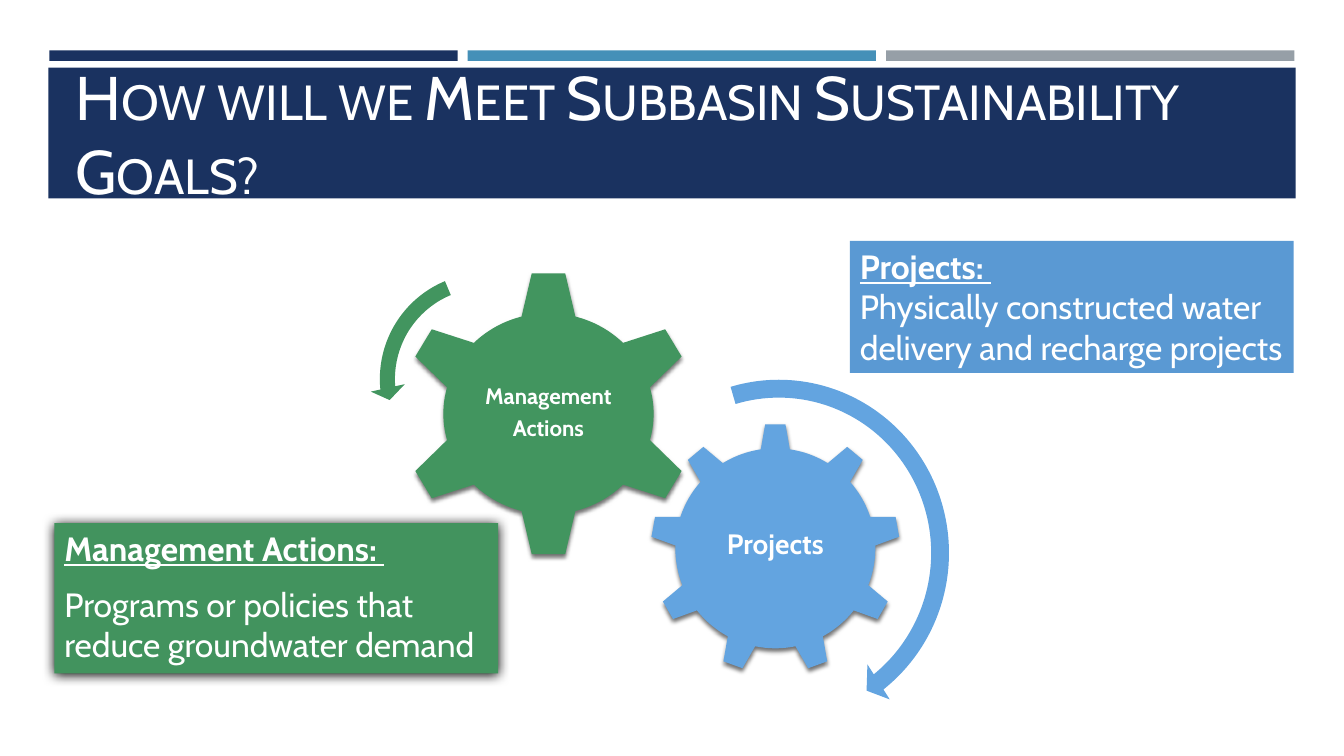
from lxml import etree
from pptx import Presentation
from pptx.dml.color import RGBColor
from pptx.enum.shapes import MSO_SHAPE
from pptx.enum.text import MSO_ANCHOR, MSO_AUTO_SIZE, PP_ALIGN
from pptx.oxml.ns import qn
from pptx.util import Inches, Pt

RECT, GEAR_6, GEAR_9 = MSO_SHAPE.RECTANGLE, MSO_SHAPE.GEAR_6, MSO_SHAPE.GEAR_9
ARC_RIGHT, ARC_LEFT = MSO_SHAPE.CIRCULAR_ARROW, MSO_SHAPE.LEFT_CIRCULAR_ARROW
TOP, MIDDLE = MSO_ANCHOR.TOP, MSO_ANCHOR.MIDDLE
LEFT, CENTER = PP_ALIGN.LEFT, PP_ALIGN.CENTER
FIT_SHAPE = MSO_AUTO_SIZE.SHAPE_TO_FIT_TEXT

FONT = "Cabin"
WIDTH, HEIGHT = Inches(13.33), Inches(7.5)
COLORS = {
    "navy": "1A3260", "teal": "4590B8", "grey": "969FA7", "white": "FFFFFF",
    "sky": "63A4E0", "green": "42955F", "sky_box": "5A99D3", "green_box": "42935E",
    "shadow": "000000",
}


def place(x, y, w, h):
    """Turn percentages of the slide's width and height into lengths."""
    return (int(WIDTH * x / 100), int(HEIGHT * y / 100),
            int(WIDTH * w / 100), int(HEIGHT * h / 100))


def add_block(s, kind, area, color, adjustments=()):
    sp = s.shapes.add_shape(kind, *place(*area))
    sp.shadow.inherit = False
    sp.fill.solid()
    sp.fill.fore_color.rgb = RGBColor.from_string(COLORS[color])
    sp.line.fill.background()
    for i, value in enumerate(adjustments):
        sp.adjustments[i] = value
    return sp


def add_shadow(sp, opacity, blur, distance):
    effects = sp._element.spPr.find(qn("a:effectLst"))
    shadow = etree.SubElement(effects, qn("a:outerShdw"), blurRad=str(Pt(blur)),
                              dist=str(Pt(distance)), dir="5400000",
                              algn="ctr", rotWithShape="0")
    color = etree.SubElement(shadow, qn("a:srgbClr"), val=COLORS["shadow"])
    etree.SubElement(color, qn("a:alpha"), val=str(opacity * 1000))


def write(sp, lines, size, align=LEFT, anchor=MIDDLE, inset=None):
    """Fill a shape with paragraphs and return them."""
    tf = sp.text_frame
    tf.word_wrap = True
    tf.vertical_anchor = anchor
    if inset is not None:
        tf.margin_left = tf.margin_right = Inches(inset)
        tf.margin_top = tf.margin_bottom = Inches(inset)
    tf.text = "\n".join(lines)
    for p in tf.paragraphs:
        p.alignment = align
        for r in p.runs:
            r.font.name = FONT
            r.font.size = Pt(size)
            r.font.color.rgb = RGBColor.from_string(COLORS["white"])
    return tf.paragraphs


def add_title(s, area, text):
    sp = s.shapes.add_textbox(*place(*area))
    for p in write(sp, [text], 44):
        p.runs[0].font._element.set("cap", "small")


def add_gear(s, kind, area, color, label_area, lines, size, inset):
    add_shadow(add_block(s, kind, area, color), 55, 3, 2)
    label = s.shapes.add_textbox(*place(*label_area))
    for p in write(label, lines, size, CENTER, inset=inset):
        p.line_spacing = 0.9
        p.space_after = Pt(0.35 * size)
        p.runs[0].font.bold = True


def add_definition(s, area, color, term, meaning):
    sp = add_block(s, RECT, area, color)
    heading, body = write(sp, [term, meaning], 24, anchor=TOP)
    heading.runs[0].font.bold = True
    heading.runs[0].font.underline = True
    return sp, heading, body


def main():
    prs = Presentation()
    prs.slide_width, prs.slide_height = WIDTH, HEIGHT
    s = prs.slides.add_slide(prs.slide_layouts[6])

    # Header: three accent bars over the title banner
    for i, color in enumerate(("navy", "teal", "grey")):
        add_block(s, RECT, (3.67 + 31.13 * i, 6.67, 30.38, 1.37), color)
    add_block(s, RECT, (3.6, 8.93, 92.8, 17.33), "navy")
    add_title(s, (4.88, 12, 90.25, 11.07),
              "How will we Meet Subbasin Sustainability Goals?")

    # Interlocking gears
    add_gear(s, GEAR_9, (48.39, 56, 18.6, 33.07), "sky",
             (52.14, 63.73, 11.1, 16.93), ["Projects"], 20, 0.03)
    add_gear(s, GEAR_6, (29.78, 35.73, 22.06, 38), "green",
             (35.26, 45.33, 11.1, 18.67), ["Management", "Actions"], 16, 0.02)

    # Arrows showing how the gears turn
    add_block(s, ARC_RIGHT, (44.41, 48.67, 27.08, 48.93), "sky",
              (0.049, 3.126, 31.376, 152.282, 0.057))
    add_block(s, ARC_LEFT, (27.53, 34.8, 17.25, 30.67), "green",
              (0.065, 4.3, 104.891, 148.378, 0.075))

    # Definitions
    sp, _, _ = add_definition(
        s, (63.24, 31.87, 33.01, 17.47), "sky_box", "Projects: ",
        "Physically constructed water delivery and recharge projects")
    sp.text_frame.auto_size = FIT_SHAPE

    sp, heading, body = add_definition(
        s, (4.05, 69.2, 33.01, 19.87), "green_box", "Management Actions: ",
        "Programs or policies that reduce groundwater demand")
    add_shadow(sp, 100, 8.5, 1)
    heading.space_after = body.space_after = Pt(6)
    body.space_before = Pt(4.8)

    prs.save("out.pptx")


if __name__ == "__main__":
    main()
